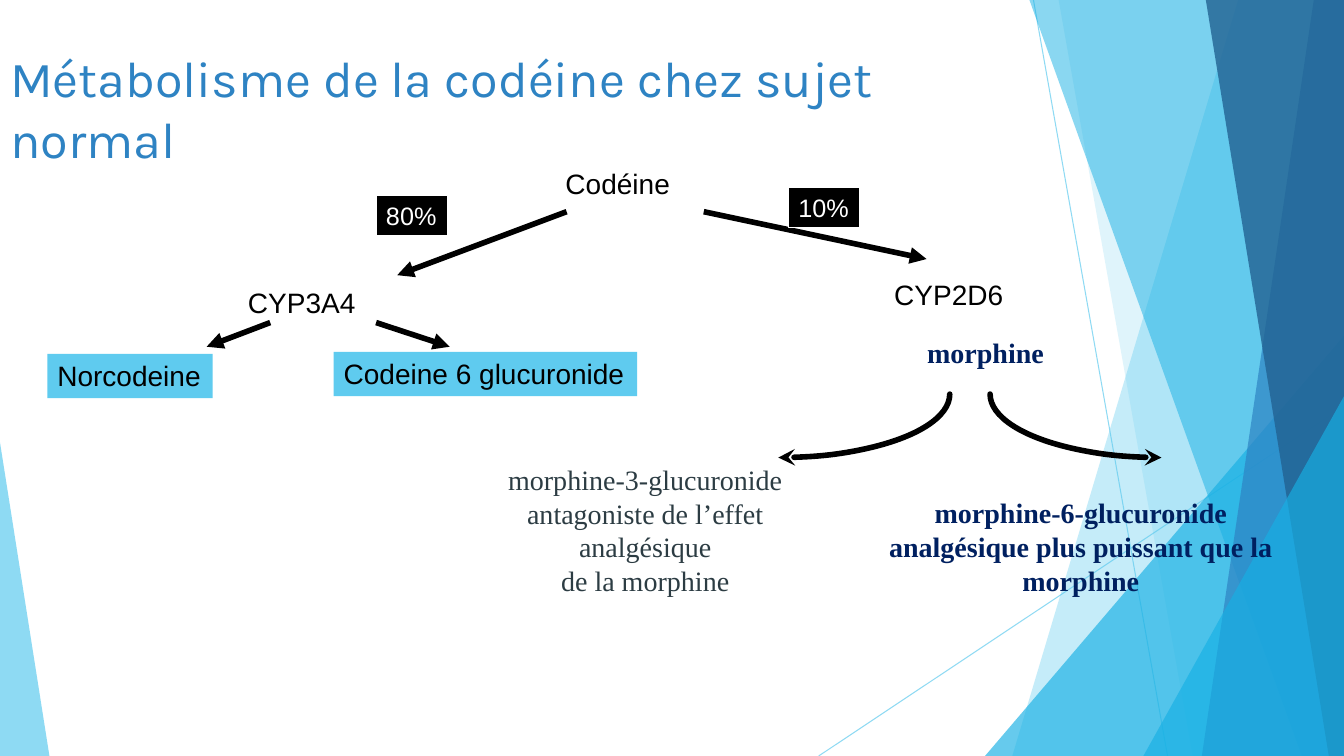
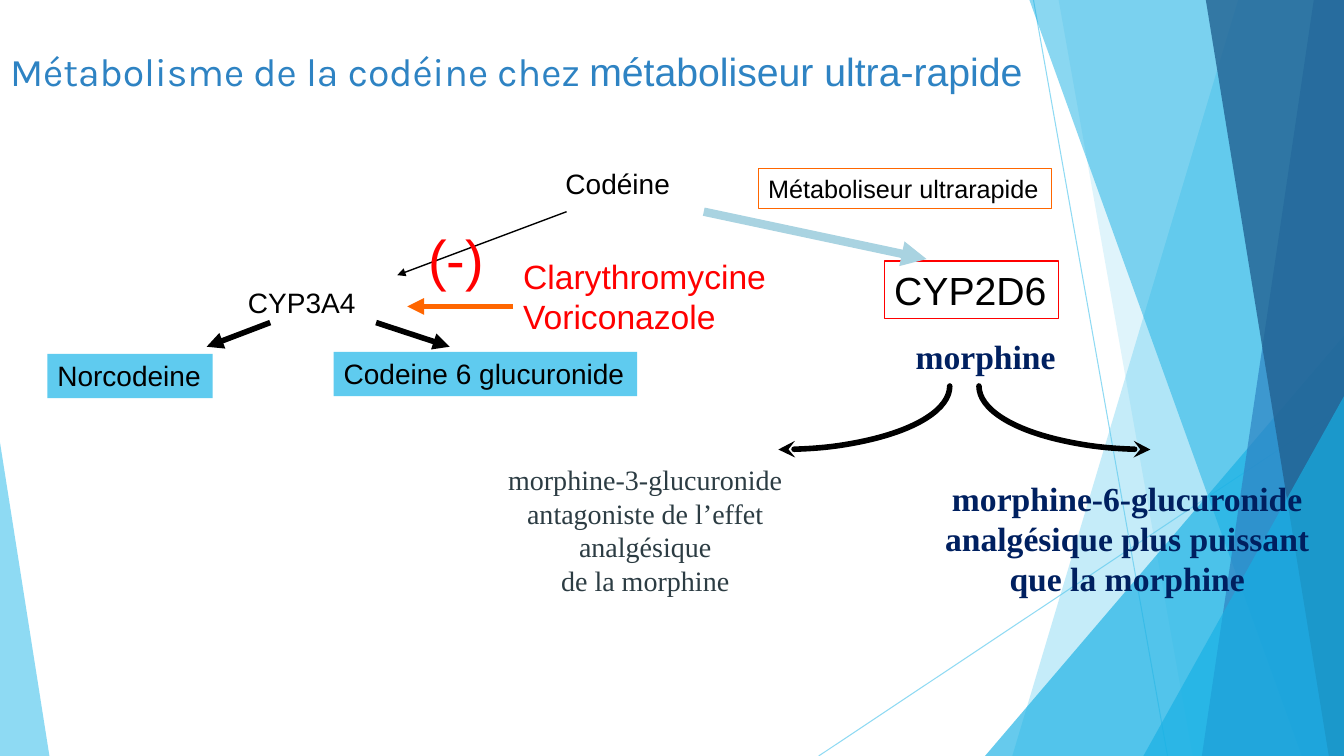
from lxml.etree import SubElement
from pptx import Presentation
from pptx.dml.color import RGBColor
from pptx.enum.shapes import MSO_CONNECTOR, MSO_SHAPE
from pptx.enum.text import MSO_ANCHOR, MSO_AUTO_SIZE, PP_ALIGN
from pptx.oxml.ns import qn
from pptx.util import Inches, Pt

SKY, CYAN, BLUE, DEEP_BLUE = "5FCBEF", "17B0E4", "2E83C3", "226292"
NAVY, SLATE, PALE_BLUE = "002060", "2C3C43", "A9D3E1"
BLACK, WHITE, RED, ORANGE = "000000", "FFFFFF", "FF0000", "FF6600"
TITLE_FONT, LABEL_FONT, MORPHINE_FONT = "Karla", "Arial", "Times New Roman"
WIDTH, HEIGHT = 13.33, 7.5
ARC_WIDTH, ARC_HEIGHT = 1.7, 0.63
QUARTER_TURN = 54  # 90 degrees in the units of the arc's adjustments


def color(hex_code):
    return RGBColor.from_string(hex_code)


def set_alpha(shape, percent):
    color_element = next(shape.element.spPr.iter(qn("a:srgbClr")))
    SubElement(color_element, qn("a:alpha"), val=str(percent * 1000))


def set_line(shape, hex_code, points):
    shape.line.color.rgb = color(hex_code)
    shape.line.width = Pt(points)


def add_arrowhead(shape, end, kind):
    """Put an arrowhead at the start (headEnd) or finish (tailEnd) of a line."""
    SubElement(shape.line._get_or_add_ln(), qn(f"a:{end}"), type=kind)


def add_line(slide, start, finish, hex_code, points):
    ends = [Inches(value) for value in (*start, *finish)]
    line = slide.shapes.add_connector(MSO_CONNECTOR.STRAIGHT, *ends)
    set_line(line, hex_code, points)
    SubElement(line.element.spPr, qn("a:effectLst"))
    return line


def add_arrow(slide, start, finish, hex_code=BLACK, points=4):
    add_arrowhead(add_line(slide, start, finish, hex_code, points), "tailEnd", "triangle")


def fill_translucent(shape, hex_code, alpha):
    shape.fill.solid()
    shape.fill.fore_color.rgb = color(hex_code)
    shape.line.fill.background()
    shape.shadow.inherit = False
    set_alpha(shape, alpha)
    return shape


def add_band(slide, top_left, bottom_left, hex_code, alpha):
    """Add a band from a slanted left edge to the slide's right edge."""
    corners = [(top_left, 0), (WIDTH, 0), (WIDTH, HEIGHT), (bottom_left, HEIGHT)]
    points = [(Inches(x), Inches(y)) for x, y in corners]
    builder = slide.shapes.build_freeform(*points[0])
    builder.add_line_segments(points[1:], close=True)
    return fill_translucent(builder.convert_to_shape(), hex_code, alpha)


def add_corner(slide, left, top, width, apex, hex_code, alpha):
    """Add a triangle that stands on the slide's bottom edge."""
    box = [Inches(value) for value in (left, top, width, HEIGHT - top)]
    triangle = slide.shapes.add_shape(MSO_SHAPE.ISOSCELES_TRIANGLE, *box)
    triangle.adjustments[0] = apex
    return fill_translucent(triangle, hex_code, alpha)


def move_backdrop_to_layout(slide, layout):
    """Draw the backdrop and hand it to the layout, so that all slides share it."""
    backdrop = [
        add_line(slide, (10.25, 0), (11.58, HEIGHT), SKY, 0.75),
        add_line(slide, (WIDTH, 4.03), (8.12, HEIGHT), SKY, 0.75),
        add_band(slide, 12.28, 10.04, SKY, 36),
        add_band(slide, 10.5, 11.83, SKY, 20),
        add_corner(slide, 9.77, 3.33, 3.56, 1, CYAN, 66),
        add_band(slide, 10.21, 12.91, CYAN, 50),
        add_band(slide, 13.03, 11.92, BLUE, 70),
        add_band(slide, 11.96, 13.18, DEEP_BLUE, 80),
        add_corner(slide, 11.34, 3.93, 1.99, 1, CYAN, 66),
        add_corner(slide, 0, 4.39, 0.49, 0, SKY, 70),
    ]
    for line in backdrop[:2]:
        set_alpha(line, 70)
    for position, shape in enumerate(backdrop, start=2):
        next(shape.element.iter(qn("p:cNvPr"))).set("id", str(100 + position))
        layout.shapes.element.insert(position, shape.element)


def place_layout_title(layout):
    title = layout.placeholders[0]
    title.left, title.top = Inches(0), Inches(0.42)
    title.width, title.height = Inches(10.3), Inches(0.71)


def set_title(slide, size, *runs):
    """Fill the title with (text, font name) runs."""
    frame = slide.shapes.title.text_frame
    frame.word_wrap = True
    frame.auto_size = MSO_AUTO_SIZE.NONE
    frame.vertical_anchor = MSO_ANCHOR.TOP
    paragraph = frame.paragraphs[0]
    paragraph.alignment = PP_ALIGN.LEFT
    paragraph.font.size = Pt(size)
    paragraph.font.color.rgb = color(BLUE)
    for text, font_name in runs:
        run = paragraph.add_run()
        run.text = text
        run.font.name = font_name


def add_text(slide, box, lines, size=20, hex_code=BLACK, font_name=LABEL_FONT,
             bold=False, alignment=PP_ALIGN.LEFT, wrap=False):
    text_box = slide.shapes.add_textbox(*[Inches(value) for value in box])
    frame = text_box.text_frame
    frame.word_wrap = wrap
    frame.text = "\n".join(lines)
    for paragraph in frame.paragraphs:
        paragraph.alignment = alignment
        paragraph.font.name = font_name
        paragraph.font.size = Pt(size)
        paragraph.font.bold = bold
        paragraph.font.color.rgb = color(hex_code)
    return text_box


def add_label(slide, box, text, size=20, hex_code=BLACK, fill=None, border=None):
    label = add_text(slide, box, [text], size, hex_code)
    if fill:
        label.fill.solid()
        label.fill.fore_color.rgb = color(fill)
    if border:
        set_line(label, border, 1)


def add_morphine_text(slide, box, lines, size=20, hex_code=NAVY, bold=True, wrap=False):
    add_text(slide, box, lines, size, hex_code, MORPHINE_FONT, bold, PP_ALIGN.CENTER, wrap)


def add_quarter_arc(slide, center, first_quarter, arrow_end):
    """Draw a quarter of an ellipse; quarters run clockwise from the right."""
    x, y = center
    box = (x - ARC_WIDTH, y - ARC_HEIGHT, 2 * ARC_WIDTH, 2 * ARC_HEIGHT)
    arc = slide.shapes.add_shape(MSO_SHAPE.ARC, *[Inches(value) for value in box])
    arc.adjustments[0] = first_quarter * QUARTER_TURN
    arc.adjustments[1] = (first_quarter + 1) * QUARTER_TURN
    arc.fill.background()
    arc.shadow.inherit = False
    set_line(arc, BLACK, 4)
    arc.line._get_or_add_ln().set("cap", "rnd")
    add_arrowhead(arc, arrow_end, "stealth")


def add_morphine_branches(slide, top, right_start):
    add_quarter_arc(slide, (7.72, top), 0, "tailEnd")
    add_quarter_arc(slide, (right_start + ARC_WIDTH, top), 1, "headEnd")


def add_common_pathway(slide):
    add_morphine_text(slide, (4.93, 4.54, 2.94, 1.45),
                      ["morphine-3-glucuronide", "antagoniste de l’effet",
                       "analgésique", "de la morphine"], hex_code=SLATE, bold=False)
    add_label(slide, (5.51, 1.6, 1.25, 0.44), "Codéine")
    add_label(slide, (2.36, 2.78, 1.28, 0.44), "CYP3A4")
    add_label(slide, (0.47, 3.51, 1.64, 0.44), "Norcodeine", fill=SKY)
    add_label(slide, (3.31, 3.49, 3.01, 0.44), "Codeine 6 glucuronide", fill=SKY)
    add_arrow(slide, (2.68, 3.2), (2.05, 3.44))
    add_arrow(slide, (3.73, 3.2), (4.46, 3.44))


def add_codeine_arrows(slide, left_points, right_color, right_points):
    add_arrow(slide, (5.62, 2.1), (3.94, 2.73), BLACK, left_points)
    add_arrow(slide, (6.98, 2.1), (9.19, 2.57), right_color, right_points)


def fill_normal_slide(slide):
    set_title(slide, 36, ("Métabolisme de la codéine chez sujet normal", TITLE_FONT))
    add_common_pathway(slide)
    add_morphine_text(slide, (9.09, 3.28, 1.37, 0.44), ["morphine"])
    add_morphine_text(slide, (8.57, 4.87, 4.3, 1.11),
                      ["morphine-6-glucuronide",
                       "analgésique plus puissant que la morphine"], wrap=True)
    add_morphine_branches(slide, 3.91, 9.82)
    add_label(slide, (8.77, 2.7, 1.3, 0.44), "CYP2D6")
    add_codeine_arrows(slide, 4, BLACK, 4)
    for left, top, share in ((3.73, 1.94, "80%"), (7.82, 1.86, "10%")):
        add_label(slide, (left, top, 0.71, 0.4), share, 18, WHITE, BLACK, WHITE)


def fill_ultrarapid_slide(slide):
    set_title(slide, 28, ("Métabolisme de la codéine chez ", TITLE_FONT),
              ("métaboliseur ultra-rapide", LABEL_FONT))
    add_common_pathway(slide)
    add_morphine_text(slide, (8.97, 3.28, 1.61, 0.51), ["morphine"], 24)
    add_morphine_text(slide, (9.03, 4.69, 4.3, 1.31),
                      ["morphine-6-glucuronide",
                       "analgésique plus puissant que la morphine"], 24, wrap=True)
    add_morphine_branches(slide, 3.83, 9.71)
    add_label(slide, (8.77, 2.59, 1.73, 0.57), "CYP2D6", 28, border=RED)
    add_codeine_arrows(slide, 1, PALE_BLUE, 6)
    add_text(slide, (5.09, 2.49, 2.64, 0.91), ["Clarythromycine", "Voriconazole"], 24, RED)
    add_arrow(slide, (5.09, 3.04), (4.04, 3.04), ORANGE)
    add_label(slide, (4.15, 2.18, 0.76, 0.77), "(-)", 40, RED)
    add_label(slide, (7.52, 1.67, 2.91, 0.4), "Métaboliseur ultrarapide", 18, border=ORANGE)


def main():
    presentation = Presentation()
    presentation.slide_width, presentation.slide_height = Inches(WIDTH), Inches(HEIGHT)
    layout = presentation.slide_layouts.get_by_name("Title Only")
    place_layout_title(layout)
    normal_slide = presentation.slides.add_slide(layout)
    move_backdrop_to_layout(normal_slide, layout)
    fill_normal_slide(normal_slide)
    fill_ultrarapid_slide(presentation.slides.add_slide(layout))
    presentation.save("out.pptx")


if __name__ == "__main__":
    main()
